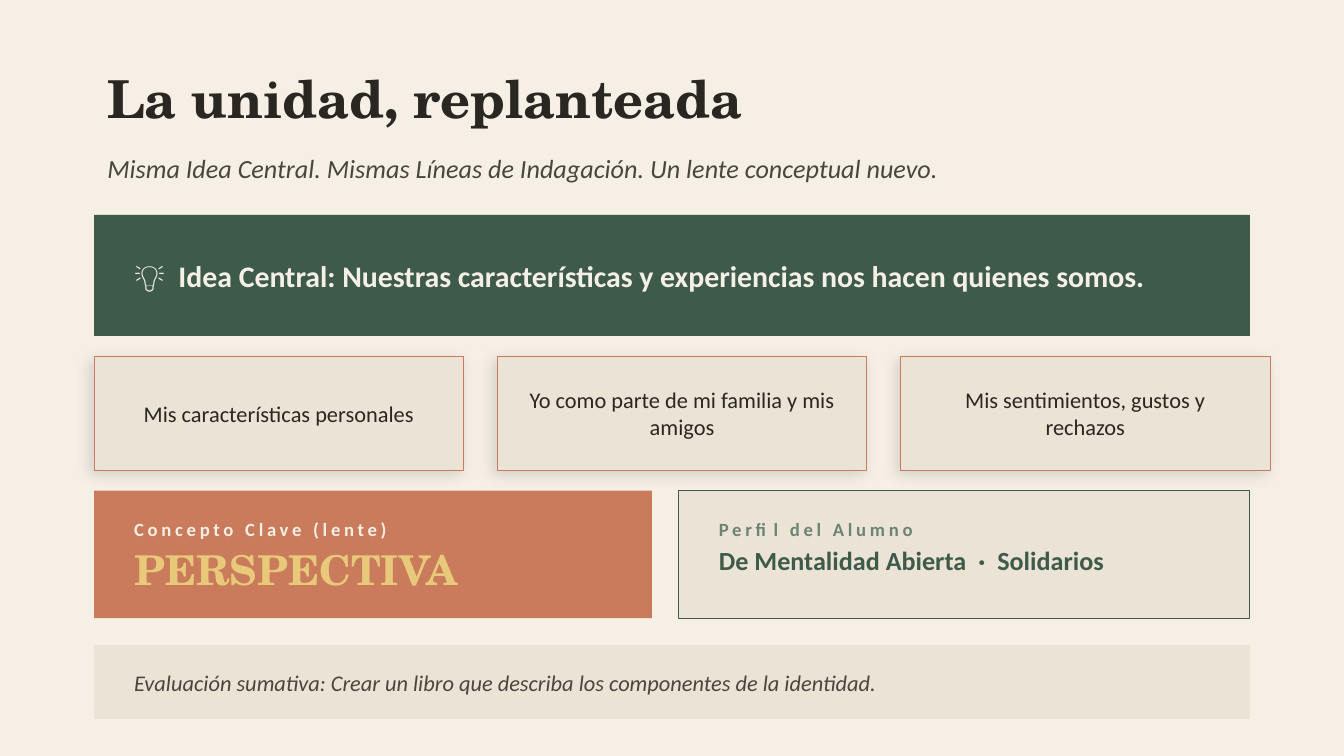
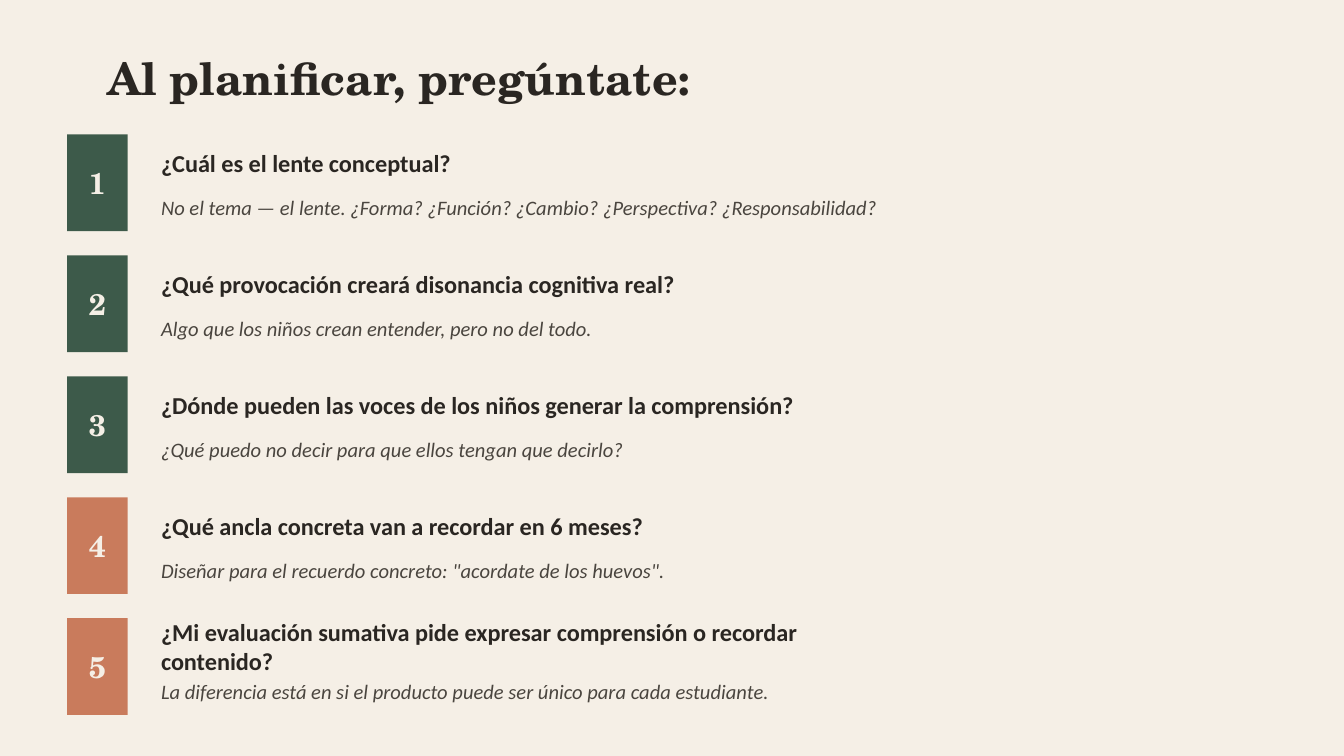
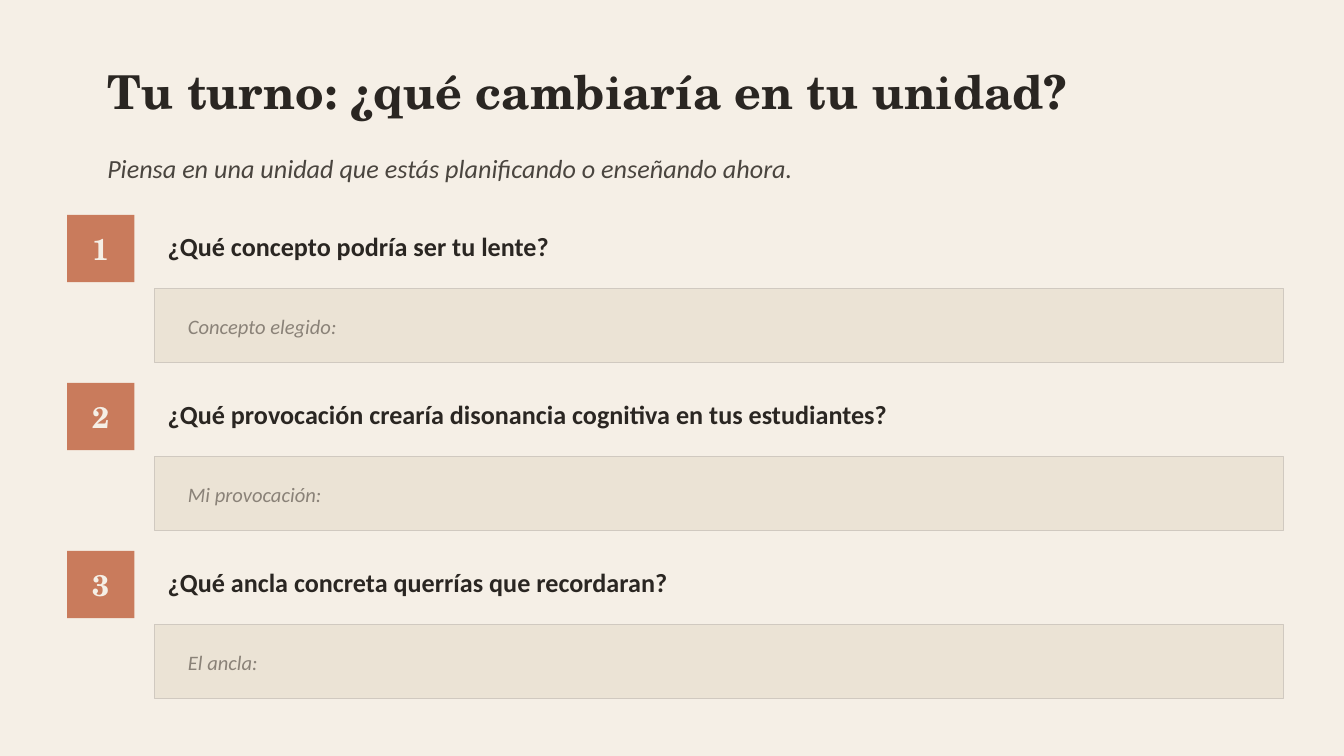
from dataclasses import dataclass
from typing import Optional, Sequence, Union

from lxml import etree
from pptx import Presentation
from pptx import util as u
from pptx.dml.color import RGBColor
from pptx.enum import shapes, text
from pptx.oxml import ns
from pptx.slide import Slide

# Shared palette and fonts
CREAM = RGBColor(0xF5, 0xEF, 0xE6)
SAND = RGBColor(0xEB, 0xE3, 0xD5)
SAND_EDGE = RGBColor(0xD0, 0xC9, 0xC0)
INK = RGBColor(0x2A, 0x26, 0x22)
SOFT_INK = RGBColor(0x4A, 0x45, 0x3F)
HINT = RGBColor(0x8A, 0x82, 0x78)
GREEN = RGBColor(0x3D, 0x5A, 0x4A)
SAGE = RGBColor(0x6B, 0x84, 0x74)
CLAY = RGBColor(0xC9, 0x7B, 0x5C)
GOLD = RGBColor(0xE8, 0xC9, 0x7A)
SERIF, SANS = "TeX Gyre Schola", "Calibri"

LEFT, WIDTH = 50.4, 619.2
BADGE_LEFT = 36
CENTER = text.PP_ALIGN.CENTER
TOP, MIDDLE, BOTTOM = (text.MSO_ANCHOR.TOP, text.MSO_ANCHOR.MIDDLE,
                       text.MSO_ANCHOR.BOTTOM)


@dataclass(frozen=True)
class Box:
    """A rectangle in points."""
    left: float
    top: float
    width: float
    height: float

    def inset(self, across: float, down: float = 0) -> "Box":
        return Box(self.left + across, self.top + down,
                   self.width - 2 * across, self.height - 2 * down)

    def lengths(self) -> list[u.Length]:
        return [u.Pt(n) for n in (self.left, self.top, self.width, self.height)]


@dataclass(frozen=True)
class Panel:
    """A filled panel with a small label over a large value."""
    box: Box
    fill: RGBColor
    edge: Optional[RGBColor]
    label: str
    label_color: RGBColor
    value: Union[str, Sequence[str]]
    value_color: RGBColor
    value_size: float
    value_font: str


@dataclass(frozen=True)
class Question:
    title: str
    hint: str
    color: RGBColor = CLAY


# Drawing helpers
def add_text(slide: Slide, box: Box, content: Union[str, Sequence[str]], *,
             size: float, color: RGBColor = INK, font: str = SANS,
             bold: bool = False, italic: bool = False, tracking: float = 0,
             align: text.PP_ALIGN = text.PP_ALIGN.LEFT,
             anchor: text.MSO_ANCHOR = MIDDLE) -> None:
    """Write one paragraph; a sequence of pieces is joined by wide spaces."""
    frame = slide.shapes.add_textbox(*box.lengths()).text_frame
    frame.word_wrap = True
    frame.vertical_anchor = anchor
    paragraph = frame.paragraphs[0]
    paragraph.alignment = align
    pieces = [content] if isinstance(content, str) else content
    runs = [(pieces[0], tracking)]
    for piece in pieces[1:]:
        runs += [(" ", size * 0.225), (piece, tracking)]
    for words, spacing in runs:
        run = paragraph.add_run()
        run.text = words
        run.font.name, run.font.size = font, u.Pt(size)
        run.font.bold, run.font.italic = bold, italic
        run.font.color.rgb = color
        if spacing:
            run._r.get_or_add_rPr().set("spc", str(round(spacing * 100)))


def add_rectangle(slide: Slide, box: Box, fill: RGBColor,
                  edge: Optional[RGBColor] = None, shadow: bool = False) -> None:
    shape = slide.shapes.add_shape(shapes.MSO_SHAPE.RECTANGLE, *box.lengths())
    shape.fill.solid()
    shape.fill.fore_color.rgb = fill
    if edge is None:
        shape.line.fill.background()
    else:
        shape.line.color.rgb = edge
        shape.line.width = u.Pt(0.5)
    shape.shadow.inherit = False
    if shadow:
        effects = shape._element.spPr.find(ns.qn("a:effectLst"))
        outer = etree.SubElement(effects, ns.qn("a:outerShdw"),
                                 blurRad=str(u.Pt(8)), dist=str(u.Pt(3)),
                                 dir=str(135 * 60000), algn="bl", rotWithShape="0")
        tone = etree.SubElement(outer, ns.qn("a:srgbClr"), val="000000")
        etree.SubElement(tone, ns.qn("a:alpha"), val="12000")


def add_badge(slide: Slide, box: Box, number: int, color: RGBColor) -> None:
    add_rectangle(slide, box, color)
    add_text(slide, box, str(number), size=16, color=CREAM, font=SERIF,
             bold=True, align=CENTER)


def add_panel(slide: Slide, panel: Panel) -> None:
    add_rectangle(slide, panel.box, panel.fill, panel.edge)
    inner = panel.box.inset(14.4)
    add_text(slide, Box(inner.left, inner.top, inner.width, 30.24), panel.label,
             size=10, color=panel.label_color, bold=True, tracking=2, anchor=BOTTOM)
    add_text(slide, Box(inner.left, inner.top + 25.2, inner.width, 36), panel.value,
             size=panel.value_size, color=panel.value_color,
             font=panel.value_font, bold=True, anchor=TOP)


def start_slide(presentation: Presentation, title: str, top: float,
                height: float, size: float, subtitle: str = "") -> Slide:
    slide = presentation.slides.add_slide(presentation.slide_layouts[6])
    slide.background.fill.solid()
    slide.background.fill.fore_color.rgb = CREAM
    add_text(slide, Box(LEFT, top, WIDTH, height), title, size=size,
             font=SERIF, bold=True)
    if subtitle:
        add_text(slide, Box(LEFT, 75.6, WIDTH, 28.8), subtitle, size=14,
                 color=SOFT_INK, italic=True)
    return slide


# Slides
def build_unit(presentation: Presentation) -> None:
    slide = start_slide(
        presentation, "La unidad, replanteada", 28.8, 46.8, 28,
        "Misma Idea Central. Mismas Líneas de Indagación. Un lente conceptual nuevo.")

    # Central idea
    idea = Box(LEFT, 115.2, WIDTH, 64.8)
    add_rectangle(slide, idea, GREEN)
    add_text(slide, idea.inset(14.4),
             ("💡", "Idea Central: Nuestras características y experiencias "
                    "nos hacen quienes somos."),
             size=16, color=CREAM, bold=True)

    # Lines of inquiry
    lines = ("Mis características personales",
             "Yo como parte de mi familia y mis amigos",
             "Mis sentimientos, gustos y rechazos")
    for index, line in enumerate(lines):
        card = Box(LEFT + index * 216, 190.8, 198, 61.2)
        add_rectangle(slide, card, SAND, CLAY, shadow=True)
        add_text(slide, card.inset(7.2), line, size=12, align=CENTER)

    # Key concept and learner profile
    panels = (
        Panel(Box(LEFT, 262.8, 298.8, 68.4), CLAY, None,
              "Concepto Clave (lente)", CREAM, "PERSPECTIVA", GOLD, 22, SERIF),
        Panel(Box(363.6, 262.8, 306, 68.4), SAND, GREEN, "Perfil del Alumno", SAGE,
              ("De Mentalidad Abierta", "·", "Solidarios"), GREEN, 14, SANS),
    )
    for panel in panels:
        add_panel(slide, panel)

    # Assessment
    assessment = Box(LEFT, 345.6, WIDTH, 39.6)
    add_rectangle(slide, assessment, SAND)
    add_text(slide, assessment.inset(14.4),
             "Evaluación sumativa: Crear un libro que describa los componentes "
             "de la identidad.", size=12, color=SOFT_INK, italic=True)


def build_planning(presentation: Presentation) -> None:
    slide = start_slide(presentation, "Al planificar, pregúntate:", 21.6, 39.6, 24)
    questions = (
        Question("¿Cuál es el lente conceptual?",
                 "No el tema — el lente. ¿Forma? ¿Función? ¿Cambio? "
                 "¿Perspectiva? ¿Responsabilidad?", GREEN),
        Question("¿Qué provocación creará disonancia cognitiva real?",
                 "Algo que los niños crean entender, pero no del todo.", GREEN),
        Question("¿Dónde pueden las voces de los niños generar la comprensión?",
                 "¿Qué puedo no decir para que ellos tengan que decirlo?", GREEN),
        Question("¿Qué ancla concreta van a recordar en 6 meses?",
                 'Diseñar para el recuerdo concreto: "acordate de los huevos".'),
        Question("¿Mi evaluación sumativa pide expresar comprensión o recordar "
                 "contenido?",
                 "La diferencia está en si el producto puede ser único para "
                 "cada estudiante."),
    )
    for index, question in enumerate(questions):
        top = 72 + index * 64.8
        add_badge(slide, Box(BADGE_LEFT, top, 32.4, 51.84), index + 1, question.color)
        add_text(slide, Box(79.2, top + 1.44, 396, 27.36), question.title,
                 size=13, bold=True)
        add_text(slide, Box(79.2, top + 27.36, 604.8, 23.04), question.hint,
                 size=11, color=SOFT_INK, italic=True)


def build_your_turn(presentation: Presentation) -> None:
    slide = start_slide(
        presentation, "Tu turno: ¿qué cambiaría en tu unidad?", 25.2, 46.8, 25,
        "Piensa en una unidad que estás planificando o enseñando ahora.")
    questions = (
        Question("¿Qué concepto podría ser tu lente?", "Concepto elegido:"),
        Question("¿Qué provocación crearía disonancia cognitiva en tus estudiantes?",
                 "Mi provocación:"),
        Question("¿Qué ancla concreta querrías que recordaran?", "El ancla:"),
    )
    for index, question in enumerate(questions):
        top = 115.2 + index * 90
        add_badge(slide, Box(BADGE_LEFT, top, 36, 36), index + 1, question.color)
        add_text(slide, Box(82.8, top + 1.44, 604.8, 30.24), question.title,
                 size=14, bold=True)
        answer = Box(82.8, top + 39.6, 604.8, 39.6)
        add_rectangle(slide, answer, SAND, SAND_EDGE)
        add_text(slide, answer.inset(10.8, 1.44), question.hint, size=11,
                 color=HINT, italic=True)


def main() -> None:
    presentation = Presentation()
    presentation.slide_width, presentation.slide_height = u.Pt(720), u.Pt(405)
    build_unit(presentation)
    build_planning(presentation)
    build_your_turn(presentation)
    presentation.save("out.pptx")


if __name__ == "__main__":
    main()
